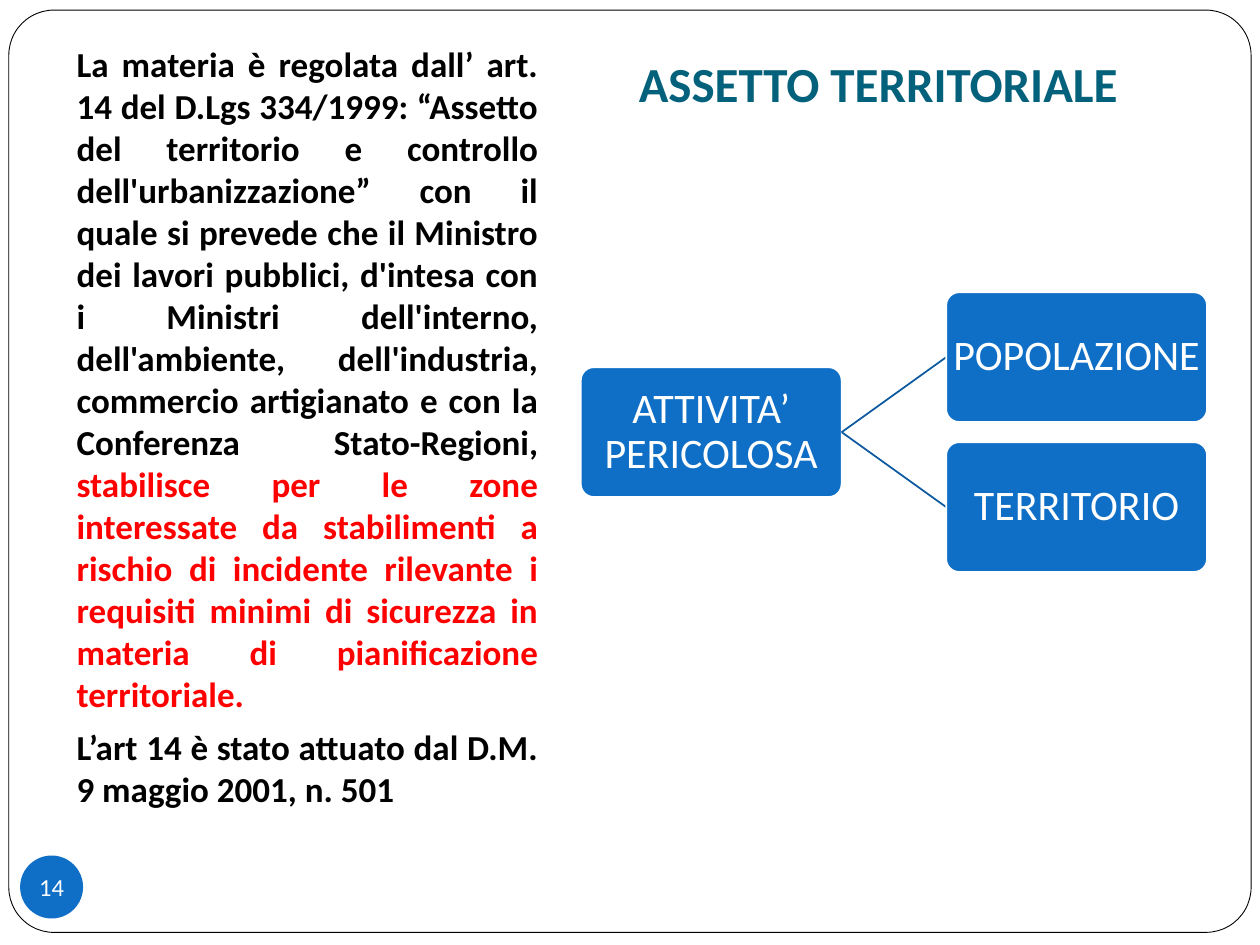
from pptx import Presentation
from pptx.dml.color import RGBColor
from pptx.enum.shapes import MSO_CONNECTOR, MSO_SHAPE
from pptx.enum.text import MSO_ANCHOR, MSO_AUTO_SIZE, PP_ALIGN
from pptx.oxml.ns import qn
from pptx.util import Inches, Pt
from lxml import etree

BLACK = RGBColor(0x00, 0x00, 0x00)
WHITE = RGBColor(0xFF, 0xFF, 0xFF)
RED = RGBColor(0xFF, 0x00, 0x00)
BLUE = RGBColor(0x0F, 0x6F, 0xC6)
DARK_BLUE = RGBColor(0x0C, 0x59, 0x9F)
TEAL = RGBColor(0x04, 0x61, 0x7B)

LAW_PARAGRAPHS = [
    [("La materia è regolata dall’ art. 14 del D.Lgs 334/1999: “Assetto del "
      "territorio e controllo dell'urbanizzazione” con il quale si prevede che "
      "il Ministro dei lavori pubblici, d'intesa con i Ministri dell'interno, "
      "dell'ambiente, dell'industria, commercio artigianato e con la "
      "Conferenza Stato-Regioni, ", BLACK),
     ("stabilisce per le zone interessate da stabilimenti a rischio di "
      "incidente rilevante i requisiti minimi di sicurezza in materia di "
      "pianificazione territoriale.", RED)],
    [("L’art 14 è stato attuato dal D.M. 9 maggio 2001, n. 501", BLACK)],
]


def set_format(target, values):
    for name, value in values.items():
        setattr(target, name, value)


def add_run(paragraph, text, size, color, bold=False):
    run = paragraph.add_run()
    run.text = text
    set_format(run.font, {"name": "Calibri", "size": Pt(size), "bold": bold})
    run.font.color.rgb = color


def set_frame(text_frame, anchor, margins, wrap=True):
    left, top, right, bottom = (Inches(margin) for margin in margins)
    set_format(text_frame, {
        "auto_size": MSO_AUTO_SIZE.NONE, "word_wrap": wrap,
        "vertical_anchor": anchor, "margin_left": left, "margin_top": top,
        "margin_right": right, "margin_bottom": bottom})


def add_panel(slide, kind, box, fill=None, line=None, width=1, corner=None):
    shape = slide.shapes.add_shape(kind, *map(Inches, box))
    shape.shadow.inherit = False
    if corner is not None:
        shape.adjustments[0] = corner
    if fill is None:
        shape.fill.background()
    else:
        shape.fill.solid()
        shape.fill.fore_color.rgb = fill
    if line is None:
        shape.line.fill.background()
    else:
        shape.line.color.rgb = line
        shape.line.width = Pt(width)
    return shape


def add_label(shape, text, size, margin, wrap=True, spacing=1.0):
    set_frame(shape.text_frame, MSO_ANCHOR.MIDDLE, [margin] * 4, wrap)
    paragraph = shape.text_frame.paragraphs[0]
    set_format(paragraph, {"alignment": PP_ALIGN.CENTER, "line_spacing": spacing})
    add_run(paragraph, text, size, WHITE)


def place_title(slide, box, text):
    title = slide.shapes.title
    set_format(title, dict(zip(("left", "top", "width", "height"), map(Inches, box))))
    set_frame(title.text_frame, MSO_ANCHOR.BOTTOM, (0.1, 0.05, 0.1, 0.1))
    paragraph = title.text_frame.paragraphs[0]
    paragraph.alignment = PP_ALIGN.CENTER
    add_run(paragraph, text, 28, TEAL, bold=True)


def add_law_text(slide, box):
    text_frame = slide.shapes.add_textbox(*map(Inches, box)).text_frame
    set_frame(text_frame, MSO_ANCHOR.TOP, (0.1, 0.05, 0.1, 0.05))
    for index, parts in enumerate(LAW_PARAGRAPHS):
        paragraph = text_frame.add_paragraph() if index else text_frame.paragraphs[0]
        set_format(paragraph, {"alignment": PP_ALIGN.JUSTIFY,
                               "space_before": Pt(5.8 if index else 0)})
        for text, color in parts:
            add_run(paragraph, text, 20, color, bold=True)


def add_branch(slide, start, end):
    branch = slide.shapes.add_connector(
        MSO_CONNECTOR.STRAIGHT, *map(Inches, (*start, *end)))
    branch.line.color.rgb = DARK_BLUE
    branch.line.width = Pt(1)
    etree.SubElement(branch._element.spPr, qn("a:effectLst"))


def add_hierarchy(slide, box, root, children):
    left, top, width, height = box
    node_width, node_height = 2.07, 1.03
    child_left = left + width - node_width
    middle = top + height / 2
    step = (height - node_height) / (len(children) - 1)

    def add_node(text, node_left, node_top):
        node = add_panel(slide, MSO_SHAPE.ROUNDED_RECTANGLE,
                         (node_left, node_top, node_width, node_height),
                         BLUE, WHITE, corner=0.1)
        add_label(node, text, 24, 0.02, spacing=0.9)

    add_node(root, left, middle - node_height / 2)
    for index, text in enumerate(children):
        child_top = top + index * step
        add_branch(slide, (left + node_width, middle),
                   (child_left, child_top + node_height / 2))
        add_node(text, child_left, child_top)


def main():
    presentation = Presentation()
    presentation.slide_width = Inches(10)
    presentation.slide_height = Inches(7.5)
    slide = presentation.slides.add_slide(presentation.slide_layouts[5])

    # Page border
    add_panel(slide, MSO_SHAPE.ROUNDED_RECTANGLE, (0.07, 0.08, 9.86, 7.32),
              line=BLACK, width=0.5, corner=0.049)
    # Title and legal text
    place_title(slide, (4.37, 0.36, 5.2, 0.63), "ASSETTO TERRITORIALE")
    add_law_text(slide, (0.51, 0.29, 3.86, 6.93))
    # Page number badge
    badge = add_panel(slide, MSO_SHAPE.OVAL, (0.16, 6.79, 0.5, 0.5), BLUE)
    add_label(badge, "14", 14, 0, wrap=False)
    # Hazardous activity and what it affects
    add_hierarchy(slide, (4.61, 2.32, 4.97, 2.22), "ATTIVITA’ PERICOLOSA",
                  ["POPOLAZIONE", "TERRITORIO"])

    presentation.save("out.pptx")


if __name__ == "__main__":
    main()
